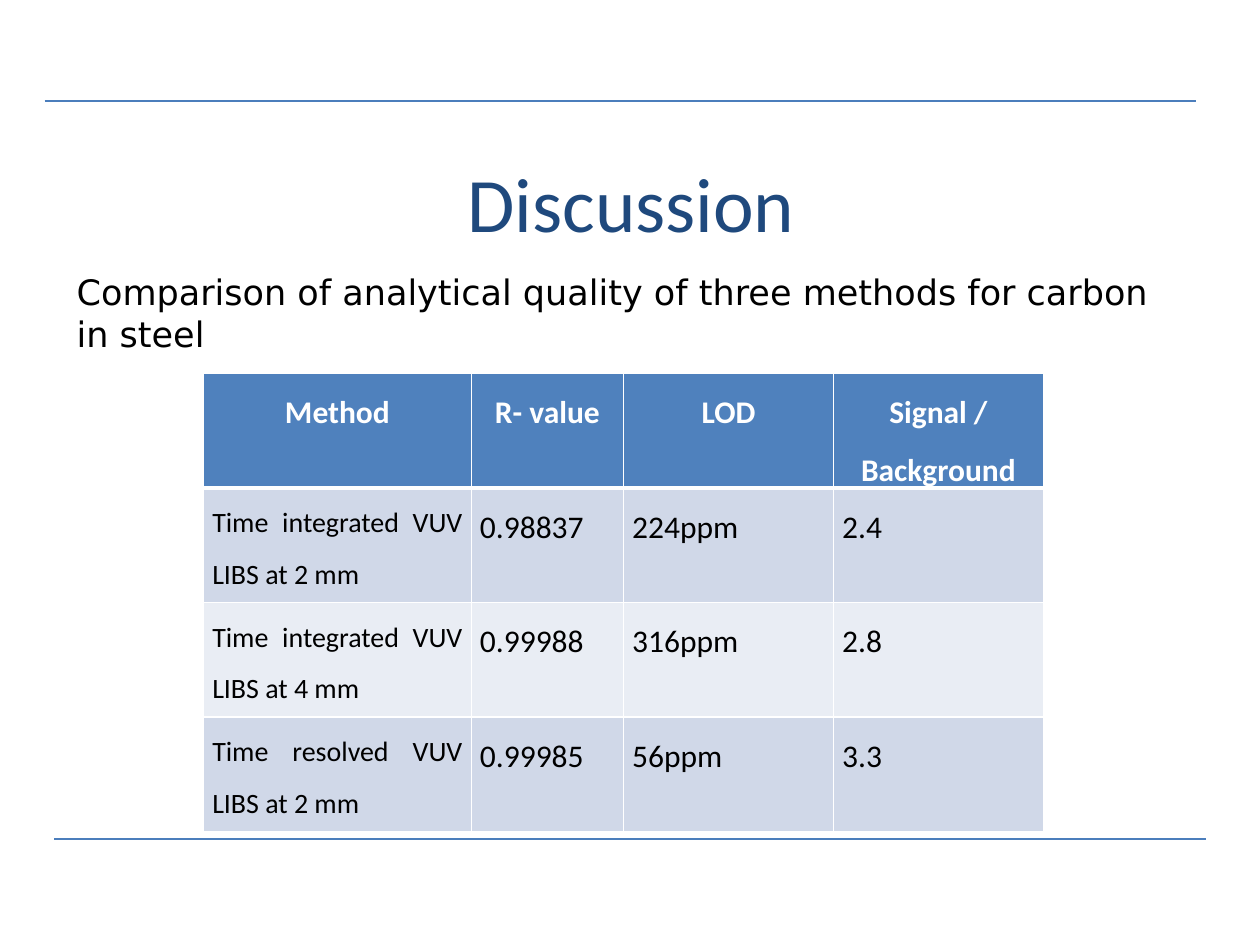
from lxml import etree
from pptx import Presentation
from pptx.dml.color import RGBColor
from pptx.enum.shapes import MSO_CONNECTOR
from pptx.enum.text import MSO_ANCHOR, PP_ALIGN
from pptx.oxml.ns import qn
from pptx.util import Pt

STRAIGHT = MSO_CONNECTOR.STRAIGHT
TOP, MIDDLE = MSO_ANCHOR.TOP, MSO_ANCHOR.MIDDLE
LEFT, CENTER, JUSTIFY = PP_ALIGN.LEFT, PP_ALIGN.CENTER, PP_ALIGN.JUSTIFY

COL_WIDTHS = [153, 87, 120, 120]
ROW_HEIGHT = 65.4
ROWS = [
    ["Method", "R- value", "LOD", "Signal / Background"],
    ["Time integrated VUV LIBS at 2 mm", "0.98837", "224ppm", "2.4"],
    ["Time integrated VUV LIBS at 4 mm", "0.99988", "316ppm", "2.8"],
    ["Time resolved VUV LIBS at 2 mm", "0.99985", "56ppm", "3.3"],
]


def rgb(value):
    return RGBColor.from_string(value)


def set_text(p, text, size, color, align, font="Calibri", bold=False):
    p.text = text
    p.alignment = align
    p.font.size = Pt(size)
    p.font.name = font
    p.font.bold = bold
    p.font.color.rgb = rgb(color)


def add_text(s, x, y, w, h, text, size, color, align, anchor, font):
    tf = s.shapes.add_textbox(Pt(x), Pt(y), Pt(w), Pt(h)).text_frame
    tf.word_wrap = True
    tf.vertical_anchor = anchor
    set_text(tf.paragraphs[0], text, size, color, align, font)


def add_rule(s, x, y, w):
    line = s.shapes.add_connector(STRAIGHT, Pt(x), Pt(y), Pt(x + w), Pt(y))
    line.line.color.rgb = rgb("4B7EBC")
    line.line.width = Pt(1)
    etree.SubElement(line._element.spPr, qn("a:effectLst"))


def set_borders(cell, color, top, bottom):
    tc_pr = cell._tc.get_or_add_tcPr()
    for side, width in (("L", 1), ("R", 1), ("T", top), ("B", bottom)):
        ln = etree.SubElement(tc_pr, qn("a:ln" + side), w=str(Pt(width)))
        fill = etree.SubElement(ln, qn("a:solidFill"))
        etree.SubElement(fill, qn("a:srgbClr"), val=color)


def fill_cell(cell, text, row, col):
    header = row == 0
    cell.margin_left = cell.margin_right = Pt(5)
    cell.margin_top, cell.margin_bottom = Pt(0.7), Pt(0)
    set_borders(cell, "FFFFFF", 3 if row == 1 else 1, 3 if header else 1)
    cell.fill.solid()
    band = "D0D8E8" if row % 2 else "E9EDF4"
    cell.fill.fore_color.rgb = rgb("4F81BD" if header else band)
    p = cell.text_frame.paragraphs[0]
    p.line_spacing = 1.5
    size = 16 if col == 0 and not header else 18
    color, align = ("FFFFFF", CENTER) if header else ("000000", JUSTIFY)
    set_text(p, text, size, color, align, bold=header)


def add_comparison_table(s, x, y):
    frame = s.shapes.add_table(len(ROWS), len(COL_WIDTHS), Pt(x), Pt(y),
                               Pt(sum(COL_WIDTHS)), Pt(ROW_HEIGHT * len(ROWS)))
    table = frame.table
    for column, width in zip(table.columns, COL_WIDTHS):
        column.width = Pt(width)
    for i, values in enumerate(ROWS):
        table.rows[i].height = Pt(ROW_HEIGHT)
        for j, text in enumerate(values):
            fill_cell(table.cell(i, j), text, i, j)


def main():
    prs = Presentation()
    prs.slide_width, prs.slide_height = Pt(720), Pt(540)
    s = prs.slides.add_slide(prs.slide_layouts[6])
    add_rule(s, 25.5, 57.6, 658)
    add_rule(s, 31, 479.5, 658)
    add_text(s, 36.7, 70, 648, 90, "Discussion", 44, "1F497D",
             CENTER, MIDDLE, "Calibri")
    add_text(s, 36.7, 151.2, 648, 323,
             "Comparison of analytical quality of three methods for carbon in steel",
             20, "000000", LEFT, TOP, "DejaVu Sans")
    add_comparison_table(s, 116.3, 213.3)
    prs.save("out.pptx")


if __name__ == "__main__":
    main()
